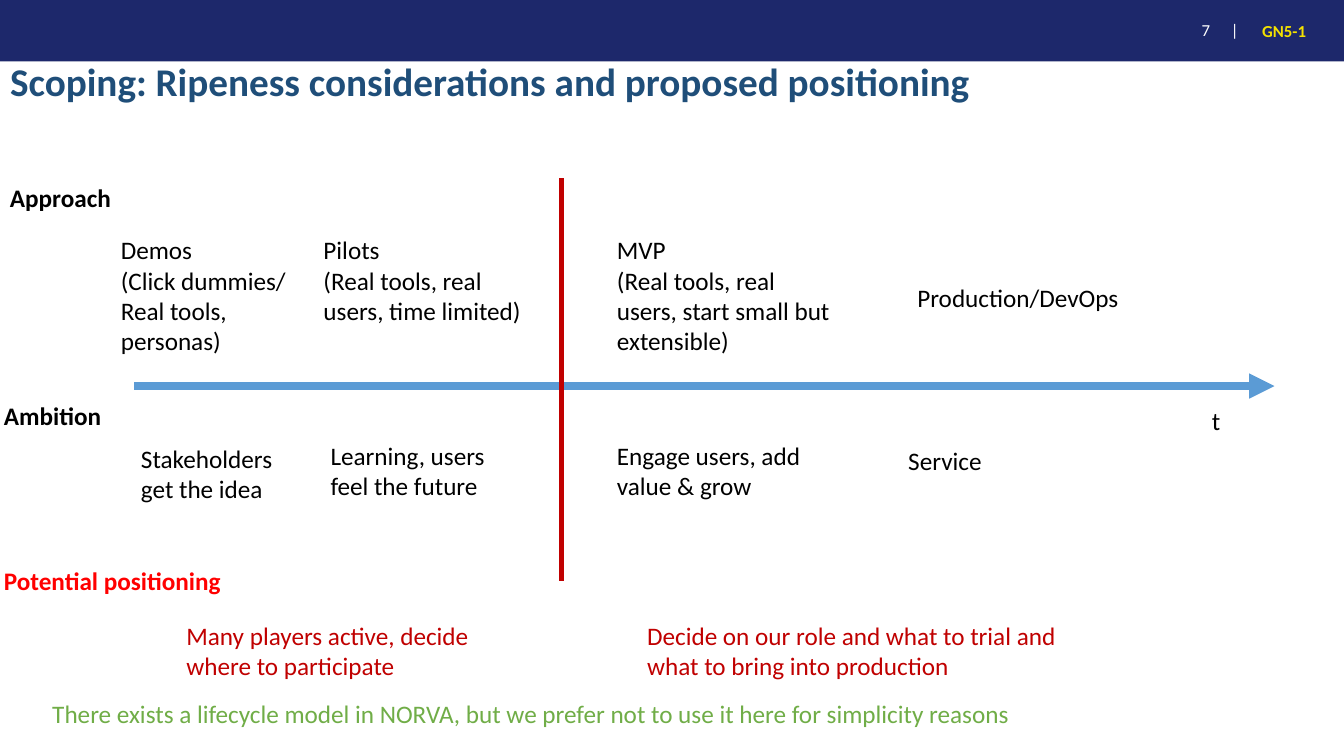
from lxml.etree import SubElement
from pptx import Presentation
from pptx.dml.color import RGBColor
from pptx.enum.shapes import MSO_CONNECTOR, MSO_SHAPE
from pptx.enum.text import MSO_ANCHOR, MSO_AUTO_SIZE, PP_ALIGN
from pptx.oxml.ns import qn
from pptx.util import Pt

PX = 9144  # 100 px to the inch
BLACK, RED = "000000", "C00000"


def rgb(code):
    return RGBColor.from_string(code)


def write(frame, text, size, color, bold=False):
    """Fill a frame: newline parts paragraphs, vertical tab breaks a line."""
    for i, para in enumerate(text.split("\n")):
        p = frame.paragraphs[0] if i == 0 else frame.add_paragraph()
        p.alignment = PP_ALIGN.LEFT
        for j, line in enumerate(para.split("\v")):
            if j:
                p.add_line_break()
            run = p.add_run()
            run.text = line
            font = run.font
            font.name, font.size, font.bold = "Calibri", Pt(size), bold
            font.color.rgb = rgb(color)


deck = Presentation()
deck.slide_width, deck.slide_height = 1333 * PX, 750 * PX
slide = deck.slides.add_slide(deck.slide_layouts[5])
shapes = slide.shapes

# Banner and title
band = shapes.add_shape(MSO_SHAPE.RECTANGLE, 0, -4 * PX, 1333 * PX, 65 * PX)
band.shadow.inherit = False
band.fill.solid()
band.fill.fore_color.rgb = rgb("1D286B")
band.line.fill.background()

title = shapes.title
title.left, title.top, title.width, title.height = 0, 47 * PX, 1229 * PX, 73 * PX
frame = title.text_frame
frame.auto_size = MSO_AUTO_SIZE.NONE
frame.vertical_anchor = MSO_ANCHOR.MIDDLE
write(frame, "Scoping: Ripeness considerations and proposed positioning", 28, "1F4E79", True)
frame.paragraphs[0].line_spacing = 0.9

for x, y, w, h, text, color, bold in [
    (1182, 12, 70, 36, "7\t|", "FFFFFF", False),
    (1242, 15, 139, 32, "GN5-1", "F4E200", True),
]:
    frame = shapes.add_textbox(x * PX, y * PX, w * PX, h * PX).text_frame
    frame.word_wrap = True
    frame.vertical_anchor = MSO_ANCHOR.MIDDLE
    if "\t" in text:
        stops = SubElement(frame.paragraphs[0]._p.get_or_add_pPr(), qn("a:tabLst"))
        SubElement(stops, qn("a:tab"), pos=str(29 * PX), algn="l")
    write(frame, text, 12, color, bold)

# Time axis and divider
for x1, y1, x2, y2, color, width, arrow in [
    (133, 383, 1264, 383, "5B9BD5", 6, True),
    (557, 177, 557, 576, RED, 4, False),
]:
    line = shapes.add_connector(MSO_CONNECTOR.STRAIGHT, x1 * PX, y1 * PX, x2 * PX, y2 * PX)
    line.line.color.rgb = rgb(color)
    line.line.width = Pt(width)
    if arrow:
        SubElement(line.line._get_or_add_ln(), qn("a:tailEnd"), type="triangle")
    SubElement(line._element.spPr, qn("a:effectLst"))

# Labels: left, top, width, height, wrap, text, colour, bold
labels = [
    (0, 176, 121, 40, False, "Approach", BLACK, True),
    (110, 228, 186, 131, False, "Demos\n(Click dummies/\vReal tools,\vpersonas)", BLACK, False),
    (311, 228, 218, 101, False, "Pilots\n(Real tools, real\vusers, time limited)", BLACK, False),
    (602, 228, 239, 131, True,
     "MVP\v(Real tools, real users, start small but extensible)", BLACK, False),
    (900, 275, 222, 40, False, "Production/DevOps", BLACK, False),
    (1192, 397, 29, 40, False, "t", BLACK, False),
    (-6, 392, 117, 40, False, "Ambition", BLACK, True),
    (130, 435, 166, 71, True, "Stakeholders get the idea", BLACK, False),
    (318, 432, 194, 71, True, "Learning, users feel the future", BLACK, False),
    (602, 432, 216, 71, True, "Engage users, add value & grow", BLACK, False),
    (891, 437, 94, 40, False, "Service", BLACK, False),
    (-6, 556, 237, 40, False, "Potential positioning", "FF0000", True),
    (175, 610, 351, 71, True, "Many players active, decide where to participate", RED, False),
    (632, 610, 430, 71, True,
     "Decide on our role and what to trial and what to bring into production", RED, False),
    (42, 688, 1000, 40, True,
     "There exists a lifecycle model in NORVA, but we prefer not to use it here "
     "for simplicity reasons", "70AD47", False),
]
for x, y, w, h, wrap, text, color, bold in labels:
    frame = shapes.add_textbox(x * PX, y * PX, w * PX, h * PX).text_frame
    frame.word_wrap = wrap
    frame.auto_size = MSO_AUTO_SIZE.SHAPE_TO_FIT_TEXT
    write(frame, text, 18, color, bold)

deck.save("out.pptx")
